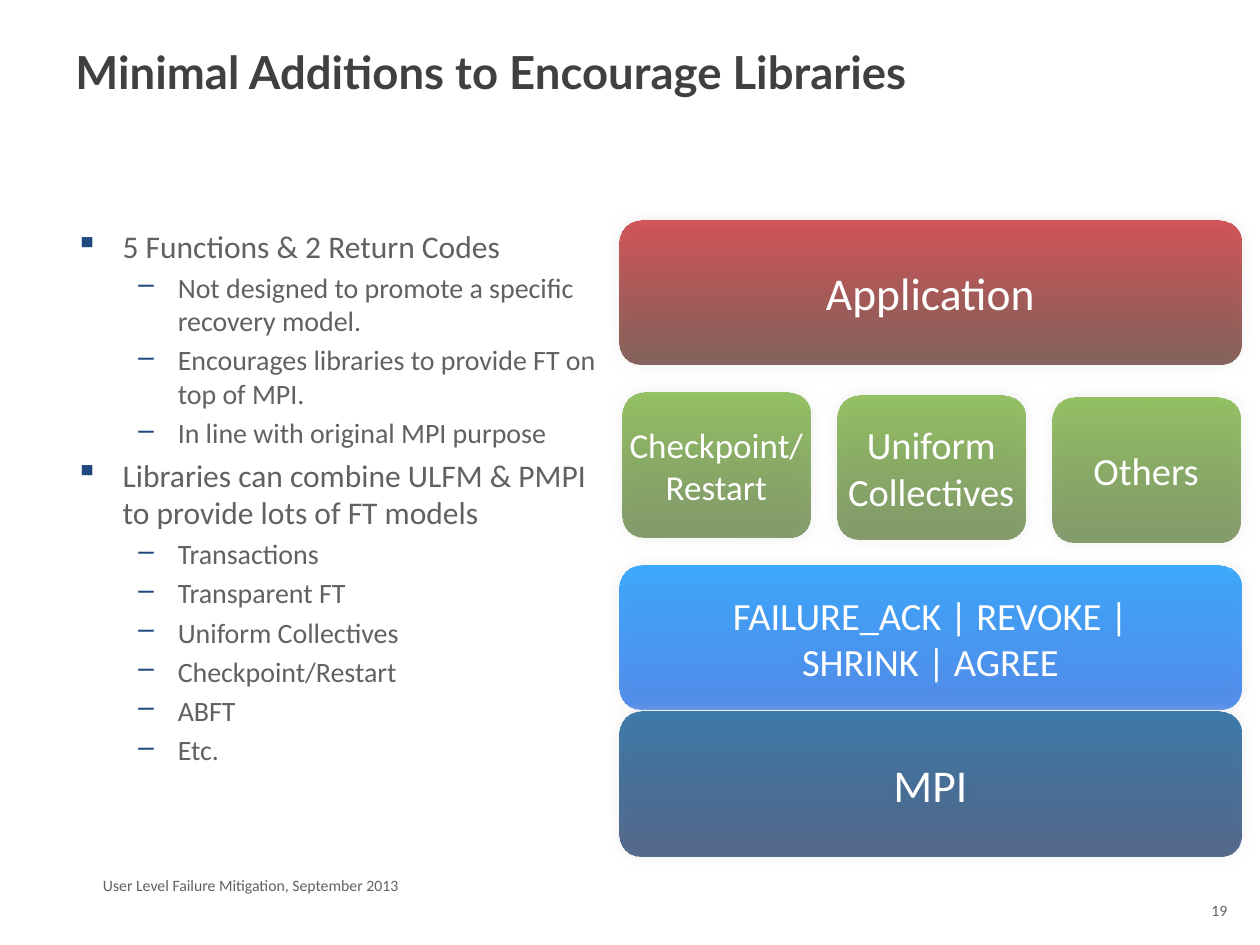
"""Build the slide on minimal additions that encourage fault-tolerance libraries."""
from lxml import etree
from pptx import Presentation
from pptx import util as u
from pptx.dml.color import RGBColor
from pptx.enum import shapes, text
from pptx.oxml import ns

TITLE_GREY = RGBColor(0x40, 0x40, 0x40)
TEXT_GREY = RGBColor(0x61, 0x61, 0x61)
WHITE = RGBColor(0xFF, 0xFF, 0xFF)
BULLET_BLUE = RGBColor(0x1F, 0x49, 0x7D)
SHADOW_GREY = RGBColor(0xD2, 0xD2, 0xD2)
RED = RGBColor(0xC8, 0x20, 0x26), RGBColor(0x49, 0x16, 0x0B)
GREEN = RGBColor(0x74, 0xB0, 0x34), RGBColor(0x49, 0x6C, 0x25)
BRIGHT_BLUE = RGBColor(0x00, 0x90, 0xFF), RGBColor(0x00, 0x57, 0xE5)
DARK_BLUE = RGBColor(0x00, 0x52, 0x91), RGBColor(0x00, 0x20, 0x54)

GRADIENT_ALPHAS = 75, 65
LAYER_LEFT, LAYER_WIDTH = 354.2, 355
LIBRARY_LEFT, LIBRARY_TOP, LIBRARY_WIDTH = 355.7, 224.6, 107.3
LIBRARY_STEP, LIBRARY_DROP = 122.8, 1.4
BOX_HEIGHT = 82.4

BULLET_LEVELS = [("▪", 18, 27, -27), ("–", 16, 58.5, -22.5)]
BULLETS = [
    (0, "5 Functions & 2 Return Codes"),
    (1, "Not designed to promote a specific recovery model."),
    (1, "Encourages libraries to provide FT on top of MPI."),
    (1, "In line with original MPI purpose"),
    (0, "Libraries can combine ULFM & PMPI to provide lots of FT models"),
    (1, "Transactions"),
    (1, "Transparent FT"),
    (1, "Uniform Collectives"),
    (1, "Checkpoint/Restart"),
    (1, "ABFT"),
    (1, "Etc."),
]
LAYERS = [
    (126, ["Application"], 26, RED),
    (323.3, ["FAILURE_ACK | REVOKE |", "SHRINK | AGREE"], 22, BRIGHT_BLUE),
    (406.8, ["MPI"], 26, DARK_BLUE),
]
LIBRARIES = [
    (["Checkpoint/Restart"], 20),
    (["Uniform", "Collectives"], 22),
    (["Others"], 22),
]


def add_element(parent, tag, **attributes):
    """Append a drawing element to parent and return it."""
    element = etree.SubElement(parent, ns.qn(tag))
    for name, value in attributes.items():
        element.set(name, str(value))
    return element


def add_run(paragraph, wording, size, color, font="Calibri", bold=False):
    """Add one formatted run to a paragraph."""
    run = paragraph.add_run()
    run.text = wording
    run.font.name = font
    run.font.size = u.Pt(size)
    run.font.bold = bold
    run.font.color.rgb = color


def add_text_frame(slide, left, top, width, height):
    """Add a wrapping text box and return its text frame."""
    box = slide.shapes.add_textbox(u.Pt(left), u.Pt(top), u.Pt(width), u.Pt(height))
    box.text_frame.word_wrap = True
    return box.text_frame


def add_bullets(slide):
    """Add the two-level bulleted list."""
    frame = add_text_frame(slide, 36, 126, 318.2, 356.4)
    for index, (level, wording) in enumerate(BULLETS):
        symbol, size, margin, indent = BULLET_LEVELS[level]
        paragraph = frame.add_paragraph() if index else frame.paragraphs[0]
        paragraph.level = level
        paragraph.space_before = u.Pt(0.2 * size if index else 0)
        properties = paragraph._p.get_or_add_pPr()
        properties.set("marL", str(u.Pt(margin)))
        properties.set("indent", str(u.Pt(indent)))
        bullet_color = add_element(properties, "a:buClr")
        add_element(bullet_color, "a:srgbClr", val=BULLET_BLUE)
        add_element(properties, "a:buChar", char=symbol)
        add_run(paragraph, wording, size, TEXT_GREY)


def add_gradient(shape, colors):
    """Fill a shape from top to bottom with translucent colours."""
    shape.fill.gradient()
    shape.fill.gradient_angle = 270
    for stop, color in zip(shape.fill.gradient_stops, colors):
        stop.color.rgb = color
    stops = shape._element.spPr.iter(ns.qn("a:srgbClr"))
    for color_element, alpha in zip(stops, GRADIENT_ALPHAS):
        add_element(color_element, "a:alpha", val=alpha * 1000)


def add_glow_shadow(shape):
    """Surround a shape with a soft grey shadow."""
    shape.shadow.inherit = False
    effects = shape._element.spPr.find(ns.qn("a:effectLst"))
    shadow = add_element(effects, "a:outerShdw", blurRad=u.Pt(8), dist=0, dir=0)
    color = add_element(shadow, "a:srgbClr", val=SHADOW_GREY)
    add_element(color, "a:alpha", val=50000)


def add_box(slide, left, top, width, lines, size, colors):
    """Add a rounded box with centred lines of text."""
    shape = slide.shapes.add_shape(
        shapes.MSO_SHAPE.ROUNDED_RECTANGLE,
        u.Pt(left), u.Pt(top), u.Pt(width), u.Pt(BOX_HEIGHT))
    shape.adjustments[0] = 0.15
    add_gradient(shape, colors)
    shape.line.fill.background()
    add_glow_shadow(shape)
    frame = shape.text_frame
    frame.word_wrap = True
    frame.vertical_anchor = text.MSO_ANCHOR.MIDDLE
    frame.margin_left = frame.margin_right = frame.margin_top = frame.margin_bottom = 0
    for index, line in enumerate(lines):
        paragraph = frame.add_paragraph() if index else frame.paragraphs[0]
        paragraph.alignment = text.PP_ALIGN.CENTER
        add_run(paragraph, line, size, WHITE)


def main():
    """Build and save the slide."""
    presentation = Presentation()
    presentation.slide_width, presentation.slide_height = u.Pt(720), u.Pt(540)
    slide = presentation.slides.add_slide(presentation.slide_layouts[6])

    title = add_text_frame(slide, 36, 21.6, 648, 90).paragraphs[0]
    add_run(title, "Minimal Additions to Encourage Libraries", 26, TITLE_GREY, "Lato", True)
    add_bullets(slide)
    footer = add_text_frame(slide, 51.8, 496.8, 468, 18).paragraphs[0]
    add_run(footer, "User Level Failure Mitigation, September 2013", 9, TEXT_GREY)
    number = add_text_frame(slide, 678.2, 511.2, 30.2, 28.8).paragraphs[0]
    number.alignment = text.PP_ALIGN.RIGHT
    add_run(number, "19", 9, TEXT_GREY)

    for top, lines, size, colors in LAYERS:
        add_box(slide, LAYER_LEFT, top, LAYER_WIDTH, lines, size, colors)
    for index, (lines, size) in enumerate(LIBRARIES):
        add_box(slide, LIBRARY_LEFT + index * LIBRARY_STEP,
                LIBRARY_TOP + index * LIBRARY_DROP, LIBRARY_WIDTH, lines, size, GREEN)
    presentation.save("out.pptx")


if __name__ == "__main__":
    main()
